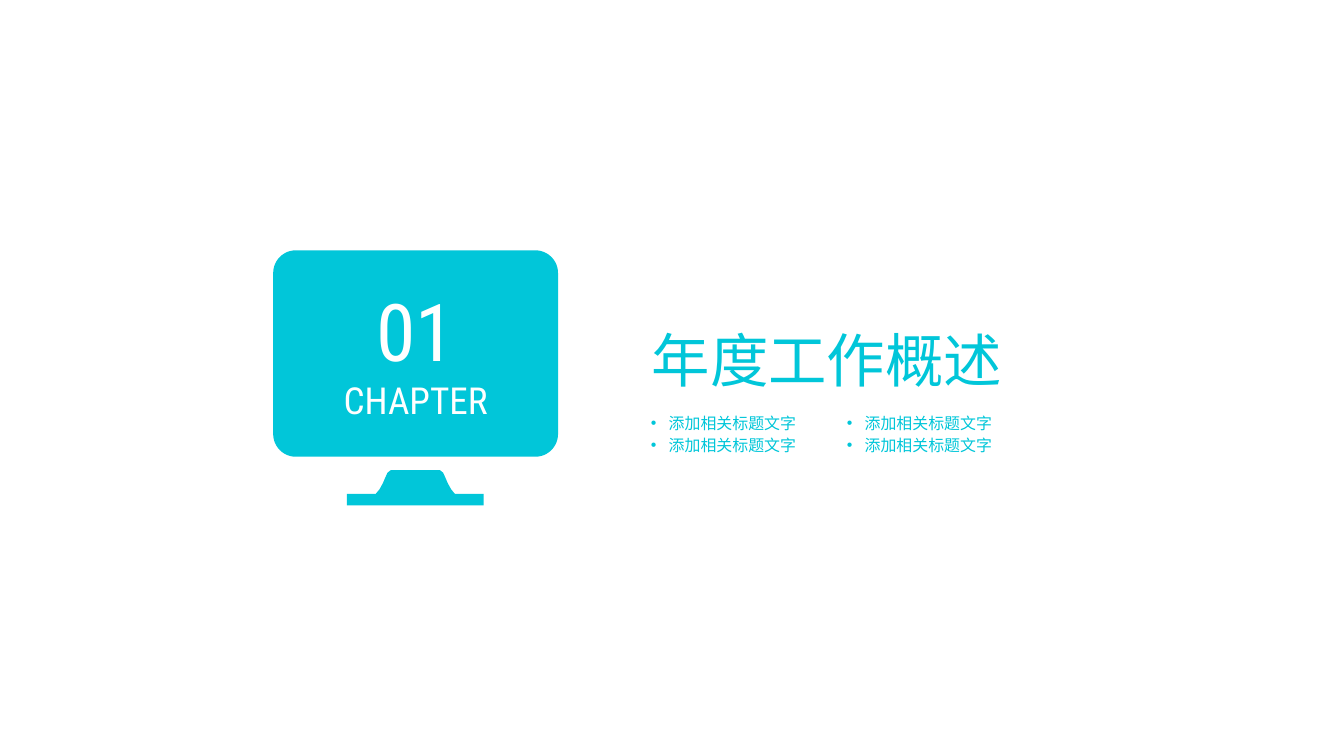
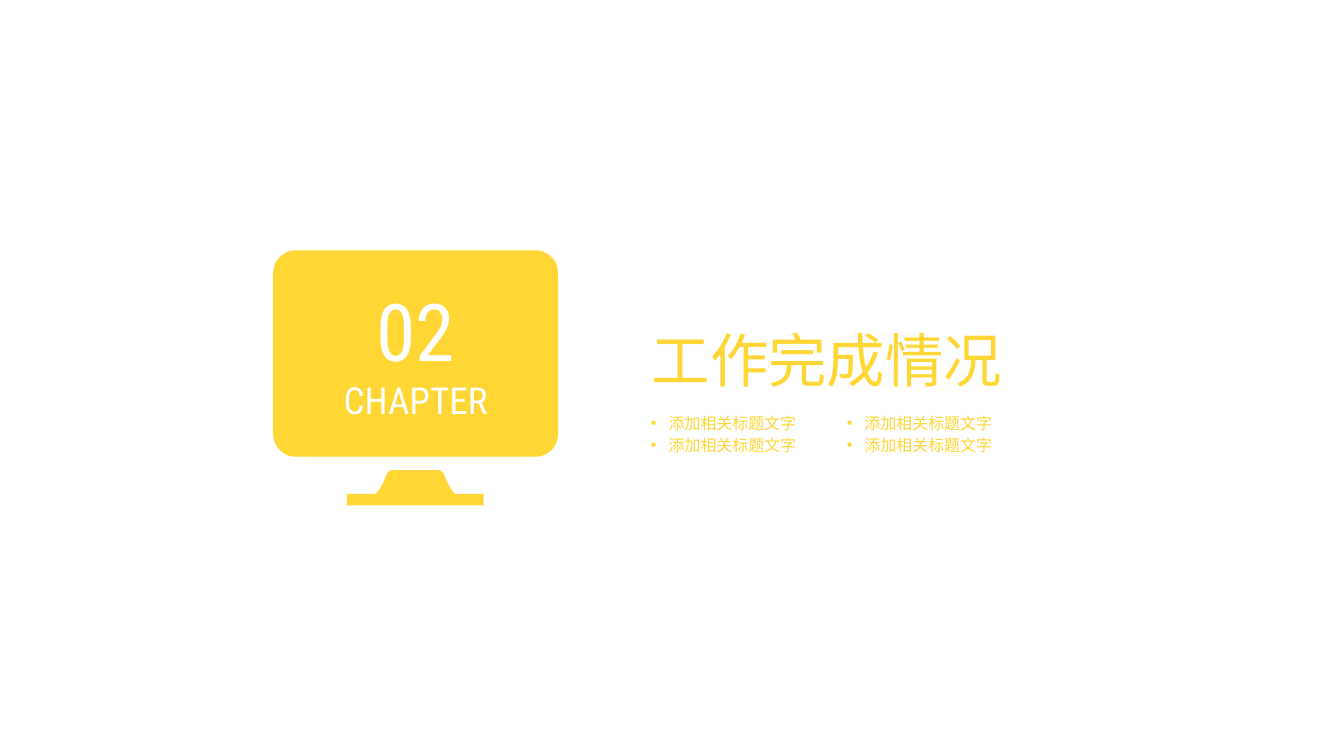
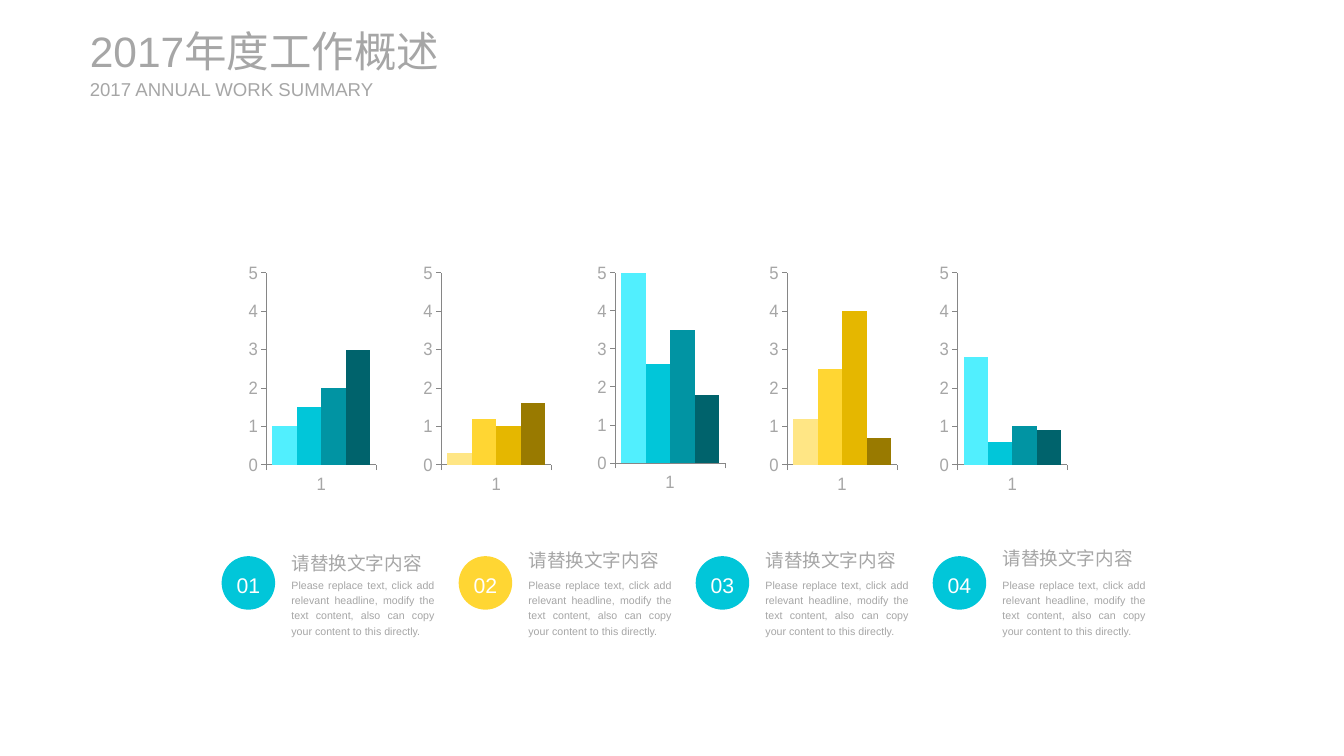
from pptx import Presentation
from pptx.chart.data import CategoryChartData
from pptx.dml.color import RGBColor
from pptx.enum.chart import XL_CHART_TYPE, XL_TICK_MARK
from pptx.enum.shapes import MSO_SHAPE
from pptx.enum.text import MSO_ANCHOR, MSO_AUTO_SIZE, PP_ALIGN
from pptx.oxml import parse_xml
from pptx.oxml.ns import nsdecls
from pptx.util import Pt

LEFT, CENTER, JUSTIFY = PP_ALIGN.LEFT, PP_ALIGN.CENTER, PP_ALIGN.JUSTIFY
TOP, MIDDLE = MSO_ANCHOR.TOP, MSO_ANCHOR.MIDDLE
ROUNDED, OVAL = MSO_SHAPE.ROUNDED_RECTANGLE, MSO_SHAPE.OVAL
COLUMNS = XL_CHART_TYPE.COLUMN_CLUSTERED
TICK_OUT, NO_TICK = XL_TICK_MARK.OUTSIDE, XL_TICK_MARK.NONE
FIT_SHAPE, NO_FIT = MSO_AUTO_SIZE.SHAPE_TO_FIT_TEXT, MSO_AUTO_SIZE.NONE

COLORS = {
    "white": "FFFFFF", "text": "A6A6A6", "axis": "868686",
    "teal light": "51EFFE", "teal": "01C6D9",
    "teal dark": "0194A3", "teal deep": "00636C",
    "gold light": "FFE685", "gold": "FFD633",
    "gold dark": "E5B700", "gold deep": "997A00",
}
SHADES = (" light", "", " dark", " deep")
FONT, NUMBER_FONT = "Arial", "Roboto Condensed"
TWO_CONTENT, TITLE_ONLY = 3, 5

TOPIC = "添加相关标题文字"
CARD_HEADING = "请替换文字内容"
CARD_TEXT = ("Please replace text, click add relevant headline, modify the text "
             "content, also can copy your content to this directly.")
CHAPTERS = (("01", "年度工作概述", "teal"), ("02", "工作完成情况", "gold"))
# left edge, colour, values, top of the plot area
CHARTS = (
    (187.2, "teal", (1, 1.5, 2, 3), 0.03),
    (319, "gold", (0.3, 1.2, 1, 1.6), 0.03),
    (450, "teal", (5, 2.6, 3.5, 1.8), 0),
    (579.6, "gold", (1.2, 2.5, 4, 0.7), 0.03),
    (707.8, "teal", (2.8, 0.6, 1, 0.9), 0.03),
)
# colour, top of the heading
CARDS = (("teal", 412.6), ("gold", 410.4), ("teal", 410.4), ("teal", 409))
CARD_STEP = 178.56


def rgb(name):
    return RGBColor.from_string(COLORS[name])


class Builder:
    def __init__(self):
        self.deck = Presentation()
        self.deck.slide_width, self.deck.slide_height = Pt(1012.5), Pt(569.5)
        self.slide = None

    def add_slide(self, layout):
        self.slide = self.deck.slides.add_slide(self.deck.slide_layouts[layout])

    def fill_frame(self, frame, lines, sizes, color, font=FONT, align=LEFT, anchor=TOP,
                   spacing=1, before=0, after=0, inset=0, fit=NO_FIT):
        """Fill a text frame with one paragraph per line, each with its size."""
        frame.text = "\n".join(lines)
        frame.word_wrap = True
        frame.auto_size = fit
        frame.vertical_anchor = anchor
        frame.margin_left = frame.margin_right = Pt(inset)
        frame.margin_top = frame.margin_bottom = Pt(inset / 2)
        for para, size in zip(frame.paragraphs, sizes):
            para.alignment = align
            para.line_spacing = spacing
            para.space_before, para.space_after = Pt(before), Pt(after)
            for span in para.runs:
                span.font.size = Pt(size)
                span.font.name = font
                span.font.color.rgb = rgb(color)

    def place(self, shape, left, top, width, height):
        shape.left, shape.top = Pt(left), Pt(top)
        shape.width, shape.height = Pt(width), Pt(height)

    def title(self, text, bounds, size, color, anchor=TOP):
        shape = self.slide.shapes.title
        self.place(shape, *bounds)
        self.fill_frame(shape.text_frame, [text], [size], color,
                        anchor=anchor, fit=FIT_SHAPE)

    def bullets(self, index, lines, bounds, color):
        shape = self.slide.placeholders[index]
        self.place(shape, *bounds)
        self.fill_frame(shape.text_frame, lines, [12] * len(lines), color,
                        after=2, inset=7.2)
        for para in shape.text_frame.paragraphs:
            properties = para._p.get_or_add_pPr()
            properties.set("marL", str(Pt(13.5)))
            properties.set("indent", str(Pt(-13.5)))
            properties.append(parse_xml(f'<a:buChar {nsdecls("a")} char="•"/>'))

    def text(self, text, bounds, size, **style):
        box = self.slide.shapes.add_textbox(*map(Pt, bounds))
        self.fill_frame(box.text_frame, [text], [size], "text", fit=FIT_SHAPE, **style)

    def paint(self, shape, color):
        shape.shadow.inherit = False
        shape.fill.solid()
        shape.fill.fore_color.rgb = rgb(color)
        shape.line.fill.background()

    def shape(self, kind, bounds, color):
        shape = self.slide.shapes.add_shape(kind, *map(Pt, bounds))
        self.paint(shape, color)
        return shape

    def monitor(self, number, color):
        screen = self.shape(ROUNDED, (205.8, 188.6, 214.6, 155.5), color)
        screen.adjustments[0] = 0.11
        self.fill_frame(screen.text_frame, [number, "CHAPTER"], [60, 28], "white",
                        font=NUMBER_FONT, align=CENTER, anchor=MIDDLE)
        screen.text_frame.margin_bottom = Pt(2.8)
        self.stand(261.4, 354.2, color)

    def stand(self, left, top, color):
        width = 103
        half = [(0, 26.6), (0, 18), (21.6, 18), (24.5, 14.5),
                (27, 10), (28.8, 5.8), (30.5, 2), (33, 0)]
        outline = half + [(width - x, y) for x, y in reversed(half)]
        points = [(Pt(left + x), Pt(top + y)) for x, y in outline]
        builder = self.slide.shapes.build_freeform(*points[0])
        builder.add_line_segments(points[1:], close=True)
        self.paint(builder.convert_to_shape(), color)

    def chart(self, left, color, values, plot_top):
        data = CategoryChartData()
        data.categories = ["1"]
        for number, value in enumerate(values, 1):
            data.add_series(f"Series {number}", [value])
        chart = self.slide.shapes.add_chart(
            COLUMNS, Pt(left), Pt(198), Pt(98), Pt(174.2), data).chart
        chart.has_legend = chart.has_title = False
        chart.font.size = Pt(14)
        chart.font.name = FONT
        chart.font.color.rgb = rgb("text")
        plot = chart.plots[0]
        plot.gap_width, plot.overlap = 50, 0
        plot.vary_by_categories = False
        for series, shade in zip(plot.series, SHADES):
            series.format.fill.solid()
            series.format.fill.fore_color.rgb = rgb(color + shade)
        for axis in (chart.category_axis, chart.value_axis):
            axis.has_major_gridlines = False
            axis.major_tick_mark, axis.minor_tick_mark = TICK_OUT, NO_TICK
            axis.format.line.color.rgb = rgb("axis")
        scale = chart.value_axis
        scale.minimum_scale, scale.maximum_scale, scale.major_unit = 0, 5, 1
        self.plot_area(chart, 0.04, plot_top, 0.94, 0.86)

    def plot_area(self, chart, x, y, w, h):
        """Fix the inner plot area as fractions of the chart."""
        area = chart._chartSpace.chart.plotArea
        for layout in area.findall("{*}layout"):
            area.remove(layout)
        sizes = "".join(f'<c:{key} val="{value}"/>'
                        for key, value in (("x", x), ("y", y), ("w", w), ("h", h)))
        area.insert(0, parse_xml(
            f'<c:layout {nsdecls("c")}><c:manualLayout><c:layoutTarget val="inner"/>'
            f'<c:xMode val="edge"/><c:yMode val="edge"/>{sizes}'
            '</c:manualLayout></c:layout>'))

    def card(self, number, left, heading_top, color):
        text_left = left + 52.56
        self.text(CARD_TEXT, (text_left, 434.2, 108, 45.4), 8,
                  align=JUSTIFY, spacing=1.2, before=7.5)
        self.text(CARD_HEADING, (text_left, heading_top, 108, 20.2), 14,
                  spacing=1.2, before=7.5)
        badge = self.shape(OVAL, (left, 419, 40.3, 40.3), color)
        self.fill_frame(badge.text_frame, [number], [16], "white",
                        align=CENTER, anchor=MIDDLE, spacing=1.2)

    def chapter_slide(self, number, title, color):
        self.add_slide(TWO_CONTENT)
        self.monitor(number, color)
        self.title(title, (491, 244, 265.7, 53.3), 44, color)
        for index, left in ((1, 483.1), (2, 630.7)):
            self.bullets(index, [TOPIC, TOPIC], (left, 308, 130, 44), color)

    def summary_slide(self):
        self.add_slide(TITLE_ONLY)
        self.title("2017年度工作概述", (67.7, 18.7, 311, 38.9), 32, "text", anchor=MIDDLE)
        self.text("2017 ANNUAL WORK SUMMARY", (67.7, 58.3, 221, 17.3), 14, anchor=MIDDLE)
        for chart in CHARTS:
            self.chart(*chart)
        for index, (color, heading_top) in enumerate(CARDS):
            self.card(f"{index + 1:02}", 167 + index * CARD_STEP, heading_top, color)


def main():
    builder = Builder()
    for chapter in CHAPTERS:
        builder.chapter_slide(*chapter)
    builder.summary_slide()
    builder.deck.save("out.pptx")


if __name__ == "__main__":
    main()
